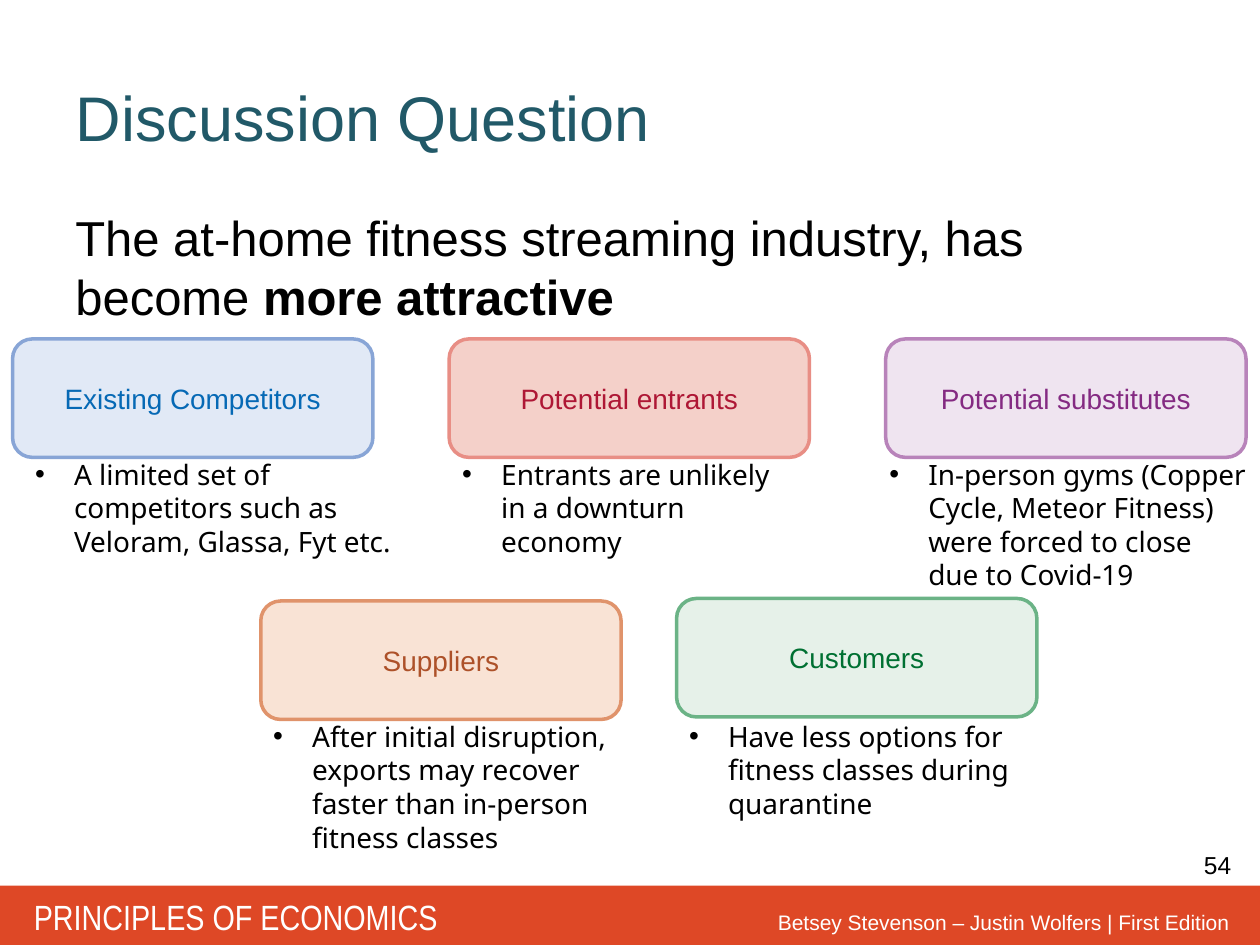
from dataclasses import dataclass

from lxml import etree
from pptx import Presentation
from pptx.dml.color import RGBColor
from pptx.enum.shapes import MSO_SHAPE
from pptx.enum.text import MSO_ANCHOR, PP_ALIGN
from pptx.oxml.ns import qn
from pptx.util import Inches, Pt

RECTANGLE, ROUNDED = MSO_SHAPE.RECTANGLE, MSO_SHAPE.ROUNDED_RECTANGLE
LEFT, CENTER, RIGHT = PP_ALIGN.LEFT, PP_ALIGN.CENTER, PP_ALIGN.RIGHT
MIDDLE = MSO_ANCHOR.MIDDLE

CARD_WIDTH, CARD_HEIGHT = 2.86, 0.94
BULLET_INDENT = 0.31
TOP_ROW, BOTTOM_ROW = 2.69, 4.77
TOP_NOTES, BOTTOM_NOTES = 3.58, 5.66
FIRST_COLUMN, COLUMN_STEP = 0.1, 3.465


@dataclass
class Force:
    """A labelled card with a bulleted note beneath it."""
    label: str
    left: float
    top: float
    fill: str
    line: str
    text_color: str
    note: str
    note_left: float
    note_top: float
    note_width: float
    note_height: float


FORCES = [
    Force("Existing Competitors", FIRST_COLUMN, TOP_ROW, "E1E9F6", "88A5D6", "0669B5",
          "A limited set of competitors such as Veloram, Glassa, Fyt etc.",
          0.18, TOP_NOTES, 3.04, 0.91),
    Force("Potential entrants", FIRST_COLUMN + COLUMN_STEP, TOP_ROW,
          "F4D0C9", "E88E85", "AE1735",
          "Entrants are unlikely in a downturn economy",
          3.57, TOP_NOTES, CARD_WIDTH, 0.91),
    Force("Potential substitutes", FIRST_COLUMN + 2 * COLUMN_STEP, TOP_ROW,
          "EFE4F0", "B883BA", "842A82",
          "In-person gyms (Copper Cycle, Meteor Fitness) were forced to close due to Covid-19",
          6.96, TOP_NOTES, 3.04, 1.18),
    Force("Suppliers", 2.07, BOTTOM_ROW, "F9E3D5", "E0936B", "AD5129",
          "After initial disruption, exports may recover faster than in-person fitness classes",
          2.07, BOTTOM_NOTES, CARD_WIDTH, 1.18),
    Force("Customers", 5.37, BOTTOM_ROW - 0.02, "E6F1E9", "6BB386", "007032",
          "Have less options for fitness classes during quarantine",
          5.37, BOTTOM_NOTES, 3.28, 0.91),
]


def color(value: str) -> RGBColor:
    return RGBColor.from_string(value)


def format_paragraph(paragraph, size: float, text_color: str = "000000",
                     font_name: str = "Arial", align=LEFT) -> None:
    paragraph.alignment = align
    font = paragraph.font
    font.name, font.size = font_name, Pt(size)
    font.color.rgb = color(text_color)


def add_bullet(paragraph) -> None:
    properties = paragraph._p.get_or_add_pPr()
    properties.set("marL", str(Inches(BULLET_INDENT)))
    properties.set("indent", str(-Inches(BULLET_INDENT)))
    etree.SubElement(properties, qn("a:buFont")).set("typeface", "Arial")
    etree.SubElement(properties, qn("a:buChar")).set("char", "•")


def add_text(slide, left: float, top: float, width: float, height: float, text: str):
    """Add a wrapping text box and return its paragraph."""
    box = slide.shapes.add_textbox(Inches(left), Inches(top), Inches(width), Inches(height))
    box.text_frame.word_wrap = True
    paragraph = box.text_frame.paragraphs[0]
    paragraph.add_run().text = text
    return paragraph


def add_block(slide, kind, left: float, top: float, width: float, height: float, fill: str):
    shape = slide.shapes.add_shape(kind, Inches(left), Inches(top),
                                   Inches(width), Inches(height))
    shape.shadow.inherit = False
    shape.fill.solid()
    shape.fill.fore_color.rgb = color(fill)
    shape.line.fill.background()
    return shape


def add_card(slide, force: Force) -> None:
    card = add_block(slide, ROUNDED, force.left, force.top,
                     CARD_WIDTH, CARD_HEIGHT, force.fill)
    card.line.color.rgb = color(force.line)
    card.line.width = Pt(2)
    card.text_frame.word_wrap = True
    card.text_frame.vertical_anchor = MIDDLE
    card.text_frame.text = force.label
    format_paragraph(card.text_frame.paragraphs[0], 16, force.text_color, align=CENTER)


def add_note(slide, force: Force) -> None:
    paragraph = add_text(slide, force.note_left, force.note_top,
                         force.note_width, force.note_height, force.note)
    add_bullet(paragraph)
    format_paragraph(paragraph, 16, font_name="Noto Sans")


def add_footer(slide) -> None:
    add_block(slide, RECTANGLE, 0, 7.03, 10, 0.47, "DE4826")
    edition = add_text(slide, 5.83, 7.17, 4.03, 0.3,
                       "Betsey Stevenson – Justin Wolfers | First Edition")
    format_paragraph(edition, 12, "FFFFFF", align=RIGHT)
    book = add_text(slide, 0.17, 7.06, 3.69, 0.44, "PRINCIPLES OF ECONOMICS")
    format_paragraph(book, 20, "FFFFFF", "Arial Narrow")
    number = add_text(slide, 8.96, 6.7, 0.91, 0.34, "54")
    format_paragraph(number, 14, align=RIGHT)


def add_heading(slide) -> None:
    title = slide.shapes.title
    title.left, title.top = Inches(0.5), Inches(0.3)
    title.width, title.height = Inches(9), Inches(1.25)
    title.text_frame.vertical_anchor = MIDDLE
    title.text_frame.text = "Discussion Question"
    format_paragraph(title.text_frame.paragraphs[0], 36, "215968")

    statement = add_text(slide, 0.5, 1.6, 9, 0.94,
                         "The at-home fitness streaming industry, has become ")
    emphasis = statement.add_run()
    emphasis.text = "more attractive"
    emphasis.font.bold = True
    format_paragraph(statement, 28)


def main() -> None:
    presentation = Presentation()
    presentation.slide_width, presentation.slide_height = Inches(10), Inches(7.5)
    slide = presentation.slides.add_slide(presentation.slide_layouts[5])

    add_footer(slide)
    add_heading(slide)

    # Cards first, so that the notes lie on top of them
    for force in FORCES:
        add_card(slide, force)
    for force in FORCES:
        add_note(slide, force)

    presentation.save("out.pptx")


if __name__ == "__main__":
    main()
